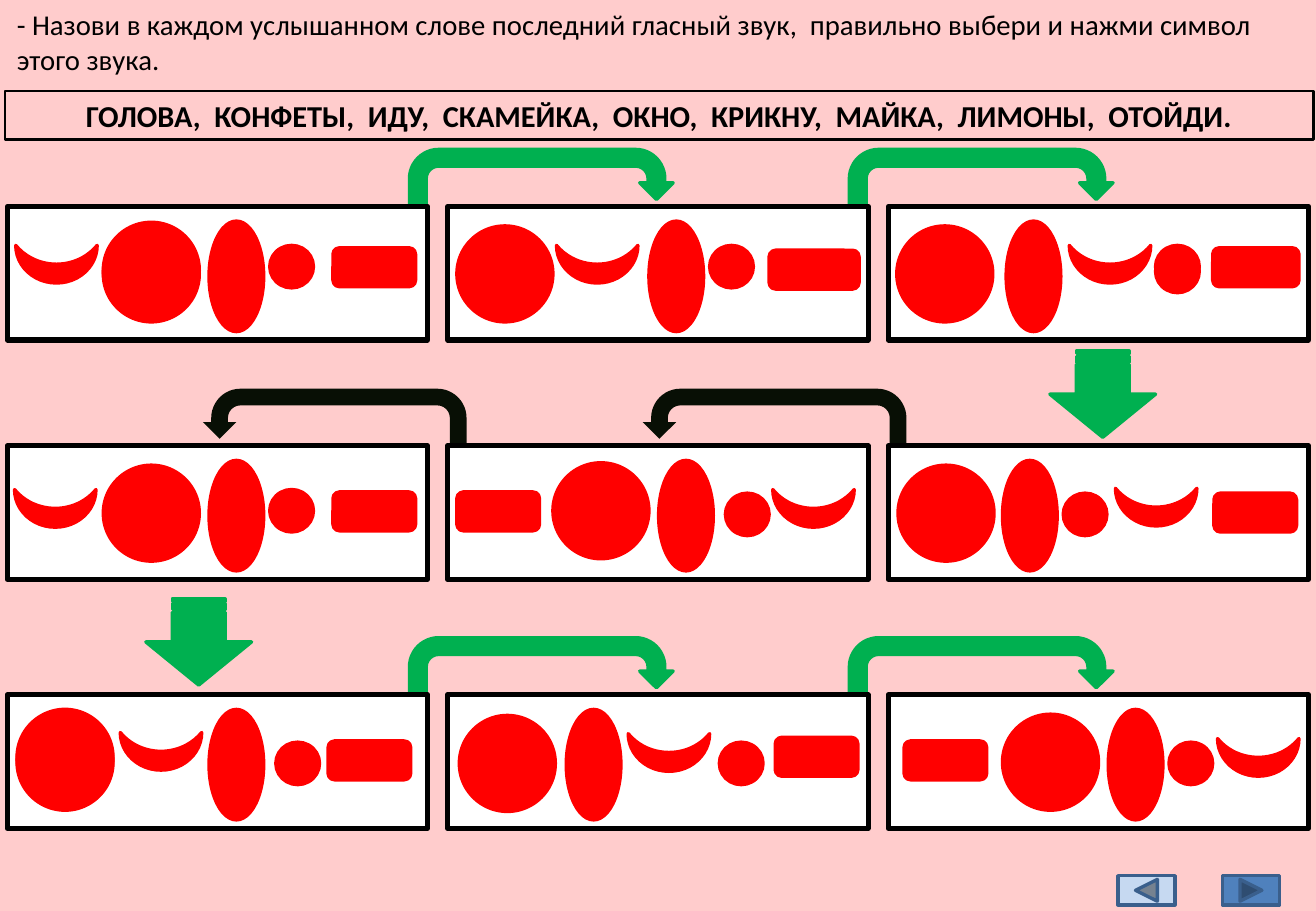
"""Build the vowel-sound exercise slide with nine cards of sound symbols."""
import itertools
from dataclasses import dataclass

import pptx
import pptx.dml.color
import pptx.enum.shapes
import pptx.enum.text
import pptx.slide
import pptx.util
from pptx.shapes.autoshape import Shape

Inches = pptx.util.Inches
Geometry = pptx.enum.shapes.MSO_SHAPE
RED, GREEN, DARK, BLACK, WHITE = "FF0000", "00B050", "080F05", "000000", "FFFFFF"
STEEL = "3A5F8C"


@dataclass(frozen=True)
class Style:
    geometry: Geometry
    width: float
    height: float
    fill: str | None
    line: str | None
    line_width: float = 2
    rotation: float = 0
    flipped: bool = False


@dataclass(frozen=True)
class Symbol:
    style: Style
    places: tuple[tuple[float, float], ...]


CARD = Style(Geometry.RECTANGLE, 3.46, 1.1, WHITE, BLACK, 3)
TURN_RIGHT = Style(Geometry.U_TURN_ARROW, 2.17, 0.55, GREEN, GREEN)
TURN_LEFT = Style(Geometry.U_TURN_ARROW, 2.17, 0.55, DARK, None, flipped=True)
ARROW_DOWN = Style(Geometry.STRIPED_RIGHT_ARROW, 0.71, 0.87, GREEN, GREEN, rotation=90)
BACK = Style(Geometry.ACTION_BUTTON_BACK_OR_PREVIOUS, 0.47, 0.24, "C6D9F1", STEEL)
FORWARD = Style(Geometry.ACTION_BUTTON_FORWARD_OR_NEXT, 0.47, 0.24, "4F81BD", STEEL)
BANNER = Style(Geometry.RECTANGLE, 10.77, 0.4, None, BLACK, 1.5)
BIG_CIRCLE = Style(Geometry.OVAL, 0.79, 0.79, RED, RED)
SMALL_CIRCLE = Style(Geometry.OVAL, 0.36, 0.35, RED, RED)
TALL_OVAL = Style(Geometry.OVAL, 0.45, 0.91, RED, RED)
MOON = Style(Geometry.MOON, 0.31, 0.67, RED, RED, rotation=270)
BAR = Style(Geometry.ROUNDED_RECTANGLE, 0.68, 0.32, RED, RED)
MIDDLE_BAR = Style(Geometry.ROUNDED_RECTANGLE, 0.74, 0.32, RED, RED)
RIGHT_BAR = Style(Geometry.ROUNDED_RECTANGLE, 0.71, 0.32, RED, RED)

CARD_LEFT, CARD_STEP = 0.06, 3.625
CARD_TOPS = (1.7, 3.67, 5.72)
TURNS = (
    Symbol(TURN_RIGHT, tuple(itertools.product((3.37, 6.99), (1.23, 5.25)))),
    Symbol(TURN_LEFT, ((1.67, 3.2), (5.29, 3.2))),
)
SYMBOLS = (
    Symbol(ARROW_DOWN, ((8.72, 2.81), (1.28, 4.85))),
    Symbol(BIG_CIRCLE, (
        (0.85, 1.83), (0.85, 1.86), (3.76, 1.86), (7.38, 1.86),
        (0.85, 3.83), (4.55, 3.81), (7.39, 3.83),
        (0.14, 5.84), (0.14, 5.88), (3.78, 5.89), (8.25, 5.88))),
    Symbol(TALL_OVAL, (
        (1.72, 1.82), (5.34, 1.82), (8.28, 1.82),
        (1.72, 3.79), (5.42, 3.79), (8.25, 3.79),
        (1.72, 5.84), (4.66, 5.84), (9.12, 5.84))),
    Symbol(SMALL_CIRCLE, (
        (2.22, 2.02), (5.84, 2.02), (9.51, 2.02), (9.51, 2.06),
        (2.22, 4.03), (5.97, 4.06), (8.75, 4.06),
        (2.27, 6.11), (5.92, 6.11), (9.62, 6.11))),
    Symbol(MOON, (
        (0.31, 1.84), (4.76, 1.84), (8.98, 1.84),
        (0.3, 3.85), (6.54, 3.85), (9.36, 3.84),
        (1.17, 5.85), (5.35, 5.86), (10.2, 5.9))),
    Symbol(BAR, (
        (2.74, 2.04), (2.74, 4.05), (3.76, 4.05), (9.99, 4.06),
        (2.7, 6.1), (6.38, 6.07), (7.44, 6.1))),
    Symbol(MIDDLE_BAR, ((6.33, 2.06),)),
    Symbol(RIGHT_BAR, ((9.98, 2.04),)),
    Symbol(BACK, ((9.2, 7.21),)),
    Symbol(FORWARD, ((10.06, 7.21),)),
)
WORDS = "ГОЛОВА,  КОНФЕТЫ,  ИДУ,  СКАМЕЙКА,  ОКНО,  КРИКНУ,  МАЙКА,  ЛИМОНЫ,  ОТОЙДИ."
TASK = ("- Назови в каждом услышанном слове последний гласный звук,  "
        "правильно выбери и нажми символ этого звука.")


def color(value: str) -> pptx.dml.color.RGBColor:
    """Turn a hex string into a colour."""
    return pptx.dml.color.RGBColor.from_string(value)


def draw_shape(slide: pptx.slide.Slide, style: Style, left: float, top: float) -> Shape:
    """Draw one styled shape at a place in inches."""
    shape = slide.shapes.add_shape(
        style.geometry, Inches(left), Inches(top), Inches(style.width), Inches(style.height))
    shape.shadow.inherit = False
    shape.rotation = style.rotation
    for format_, value in ((shape.fill, style.fill), (shape.line.fill, style.line)):
        if value is None:
            format_.background()
        else:
            format_.solid()
            format_.fore_color.rgb = color(value)
    if style.line:
        shape.line.width = pptx.util.Pt(style.line_width)
    if style.flipped:
        shape.element.spPr.get_or_add_xfrm().set("flipH", "1")
    return shape


def draw_symbol(slide: pptx.slide.Slide, symbol: Symbol) -> None:
    """Draw a symbol at each of its places."""
    for left, top in symbol.places:
        draw_shape(slide, symbol.style, left, top)


def write_text(shape: Shape, text: str, size: float, bold: bool,
               alignment: pptx.enum.text.PP_ALIGN) -> None:
    """Write one formatted paragraph into a shape."""
    frame = shape.text_frame
    frame.word_wrap = True
    frame.auto_size = pptx.enum.text.MSO_AUTO_SIZE.SHAPE_TO_FIT_TEXT
    paragraph = frame.paragraphs[0]
    paragraph.alignment = alignment
    run = paragraph.add_run()
    run.text = text
    values = {"name": "Calibri", "size": pptx.util.Pt(size), "bold": bold}
    for name, value in values.items():
        setattr(run.font, name, value)
    run.font.color.rgb = color(BLACK)


def main() -> None:
    """Build and save the presentation."""
    presentation = pptx.Presentation()
    presentation.slide_width = Inches(10.83)
    presentation.slide_height = Inches(7.5)
    slide = presentation.slides.add_slide(presentation.slide_layouts[6])
    slide.background.fill.solid()
    slide.background.fill.fore_color.rgb = color("FFCCCC")

    for turn in TURNS:
        draw_symbol(slide, turn)
    for top, column in itertools.product(CARD_TOPS, range(3)):
        draw_shape(slide, CARD, CARD_LEFT + column * CARD_STEP, top)
    for symbol in SYMBOLS:
        draw_symbol(slide, symbol)

    alignments = pptx.enum.text.PP_ALIGN
    banner = draw_shape(slide, BANNER, 0.04, 0.75)
    write_text(banner, WORDS, 18, True, alignments.CENTER)
    task = slide.shapes.add_textbox(Inches(0.04), Inches(0.01), Inches(10.73), Inches(0.67))
    write_text(task, TASK, 17, False, alignments.LEFT)
    presentation.save("out.pptx")


if __name__ == "__main__":
    main()
